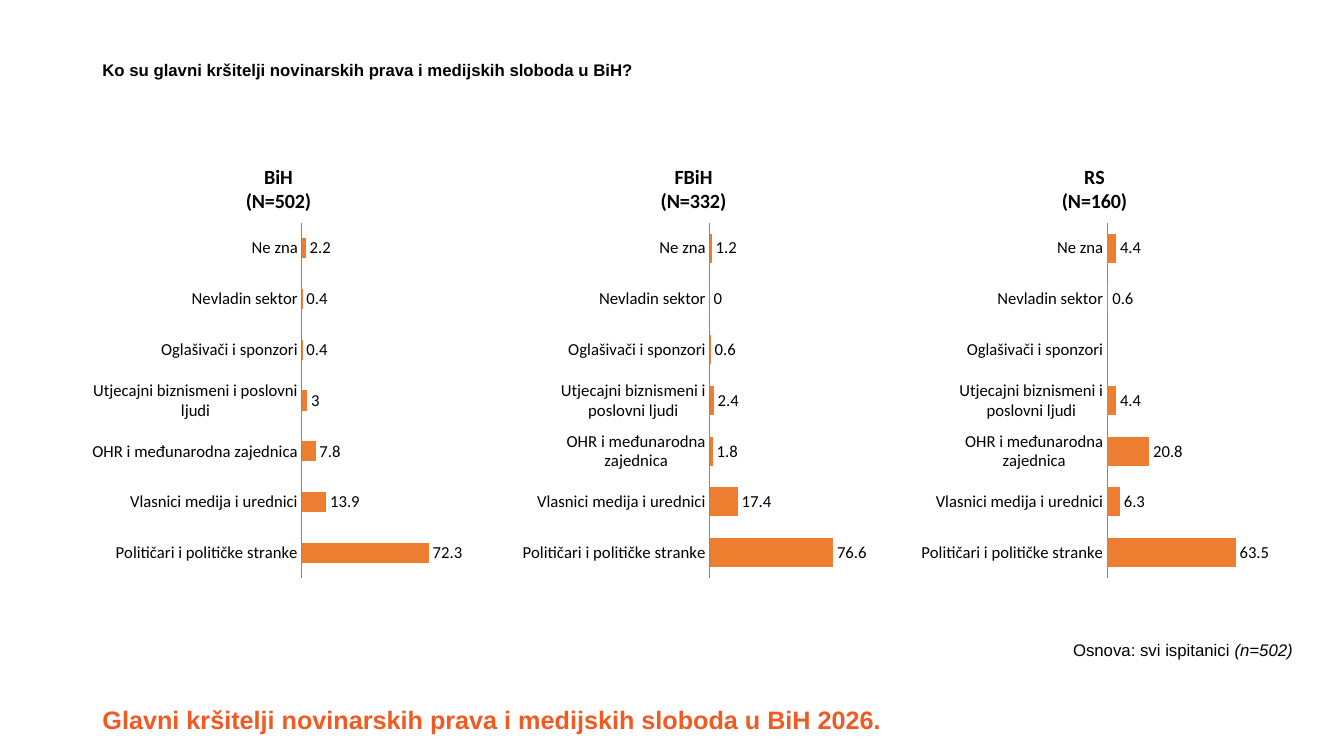
"""Build a slide of three bar charts on violators of media freedom."""
import lxml.etree
import pptx
import pptx.chart.data
import pptx.dml.color
import pptx.enum.chart
import pptx.enum.text
import pptx.oxml.ns
import pptx.util

BLACK = pptx.dml.color.RGBColor(0x00, 0x00, 0x00)
HEADLINE_ORANGE = pptx.dml.color.RGBColor(0xF1, 0x5A, 0x23)
BAR_ORANGE = pptx.dml.color.RGBColor(0xED, 0x7D, 0x31)
AXIS_GREY = pptx.dml.color.RGBColor(0x88, 0x88, 0x88)
SLIDE_SIZE = (pptx.util.Inches(13.33), pptx.util.Inches(7.5))
COLUMNS, ROWS = 160, 90
MARGIN = 11
LEFT = pptx.enum.text.PP_ALIGN.LEFT
RIGHT = pptx.enum.text.PP_ALIGN.RIGHT
CATEGORIES = [
    "Političari i političke stranke",
    "Vlasnici medija i urednici",
    "OHR i međunarodna zajednica",
    "Utjecajni biznismeni i poslovni ljudi",
    "Oglašivači i sponzori",
    "Nevladin sektor",
    "Ne zna",
]
REGIONS = [
    {"name": "BiH", "sample": 502, "left": MARGIN, "width": 44.3, "gap": 150,
     "maximum": 80, "plot": (0.56, 0.38),
     "values": [72.3, 13.9, 7.8, 3, 0.4, 0.4, 2.2]},
    {"name": "FBiH", "sample": 332, "left": 61.7, "width": 41.5, "gap": 75,
     "maximum": 80, "plot": (0.55, 0.37),
     "values": [76.6, 17.4, 1.8, 2.4, 0.6, 0, 1.2]},
    {"name": "RS", "sample": 160, "left": 109.6, "width": 41.5, "gap": 75,
     "maximum": 70, "plot": (0.54, 0.41),
     "values": [63.5, 6.3, 20.8, 4.4, None, 0.6, 4.4]},
]


def grid_box(left, top, width, height):
    """Turn grid columns and rows into slide lengths."""
    column, row = SLIDE_SIZE[0] / COLUMNS, SLIDE_SIZE[1] / ROWS
    return [int(left * column), int(top * row), int(width * column), int(height * row)]


def format_font(font, color=BLACK, **formats):
    """Apply colour and the given format values to a font."""
    font.color.rgb = color
    for name, value in formats.items():
        setattr(font, name, value)


def fill_text(shape, runs, alignment=LEFT, **formats):
    """Write runs of text and their italics into one paragraph."""
    frame = shape.text_frame
    frame.word_wrap = True
    frame.vertical_anchor = pptx.enum.text.MSO_ANCHOR.TOP
    paragraph = frame.paragraphs[0]
    paragraph.alignment = alignment
    for text, italic in runs:
        run = paragraph.add_run()
        run.text = text
        format_font(run.font, name="Arial", italic=italic, **formats)


def add_headline(slide, text, box):
    """Place and format the title placeholder."""
    title = slide.shapes.title
    for name, value in zip(("left", "top", "width", "height"), grid_box(*box)):
        setattr(title, name, value)
    fill_text(title, [(text, False)], size=pptx.util.Pt(18), bold=True,
              color=HEADLINE_ORANGE)


def add_label(slide, runs, box, **formats):
    """Add a 12 point text box."""
    label = slide.shapes.add_textbox(*grid_box(*box))
    fill_text(label, runs, size=pptx.util.Pt(12), **formats)


def set_layout(parent, index, settings):
    """Give a chart part a manual layout."""
    tag = pptx.oxml.ns.qn
    for old_layout in parent.findall(tag("c:layout")):
        parent.remove(old_layout)
    layout = lxml.etree.Element(tag("c:layout"))
    manual = lxml.etree.SubElement(layout, tag("c:manualLayout"))
    for name, value in settings.items():
        lxml.etree.SubElement(manual, tag("c:" + name)).set("val", str(value))
    parent.insert(index, layout)


def title_chart(chart, lines):
    """Write the bold chart title, one paragraph for each line."""
    chart.has_title = True
    frame = chart.chart_title.text_frame
    frame.text = "\n".join(lines)
    for paragraph in frame.paragraphs:
        format_font(paragraph.runs[0].font, name="Calibri",
                    size=pptx.util.Pt(14.4), bold=True)
    element = chart.chart_title._element
    set_layout(element, 1, {"xMode": "edge", "yMode": "edge", "x": 0.4, "y": 0.04})


def format_axes(chart, maximum):
    """Show a plain category axis and hide the value axis."""
    category_axis, value_axis = chart.category_axis, chart.value_axis
    no_tick = pptx.enum.chart.XL_TICK_MARK.NONE
    for axis in (category_axis, value_axis):
        for name, value in {"has_major_gridlines": False, "major_tick_mark": no_tick,
                            "minor_tick_mark": no_tick}.items():
            setattr(axis, name, value)
    category_axis.format.line.color.rgb = AXIS_GREY
    category_axis.format.line.width = pptx.util.Pt(0.75)
    for name, value in {"visible": False, "minimum_scale": 0,
                        "maximum_scale": maximum}.items():
        setattr(value_axis, name, value)


def format_bars(plot, gap):
    """Colour the bars and label their values."""
    for name, value in {"gap_width": gap, "overlap": -25, "vary_by_categories": False,
                        "has_data_labels": True}.items():
        setattr(plot, name, value)
    fill = plot.series[0].format.fill
    fill.solid()
    fill.fore_color.rgb = BAR_ORANGE
    labels = plot.data_labels
    labels.show_value = True
    labels.position = pptx.enum.chart.XL_LABEL_POSITION.OUTSIDE_END
    format_font(labels.font, name="Calibri", size=pptx.util.Pt(12))


def add_region_chart(slide, region):
    """Add the bar chart of one region."""
    data = pptx.chart.data.CategoryChartData()
    data.categories = CATEGORIES
    data.add_series(region["name"], region["values"])
    chart = slide.shapes.add_chart(
        pptx.enum.chart.XL_CHART_TYPE.BAR_CLUSTERED,
        *grid_box(region["left"], 17, region["width"], 52.9), data).chart
    chart.has_legend = False
    format_font(chart.font, name="Calibri", size=pptx.util.Pt(12))
    title_chart(chart, [region["name"], f"(N={region['sample']})"])
    format_axes(chart, region["maximum"])
    format_bars(chart.plots[0], region["gap"])
    plot_left, plot_width = region["plot"]
    plot_area = chart._chartSpace.chart.plotArea
    set_layout(plot_area, 0, {
        "layoutTarget": "inner", "xMode": "edge", "yMode": "edge",
        "x": plot_left, "y": 0.18, "w": plot_width, "h": 0.8})


def main():
    """Build and save the slide."""
    presentation = pptx.Presentation()
    presentation.slide_width, presentation.slide_height = SLIDE_SIZE
    slide = presentation.slides.add_slide(presentation.slide_layouts[5])
    add_headline(slide, "Glavni kršitelji novinarskih prava i medijskih sloboda u BiH 2026.",
                 (MARGIN, 83.3, 114.2, 4.8))
    add_label(slide, [("Osnova: svi ispitanici ", False), ("(n=502)", True)],
              (MARGIN, 75.6, 144.1, 6), alignment=RIGHT)
    add_label(slide, [("Ko su glavni kršitelji novinarskih prava i medijskih sloboda u BiH?",
                       False)], (MARGIN, 6.5, 134.8, 3.6), bold=True)
    for region in REGIONS:
        add_region_chart(slide, region)
    presentation.save("out.pptx")


if __name__ == "__main__":
    main()
